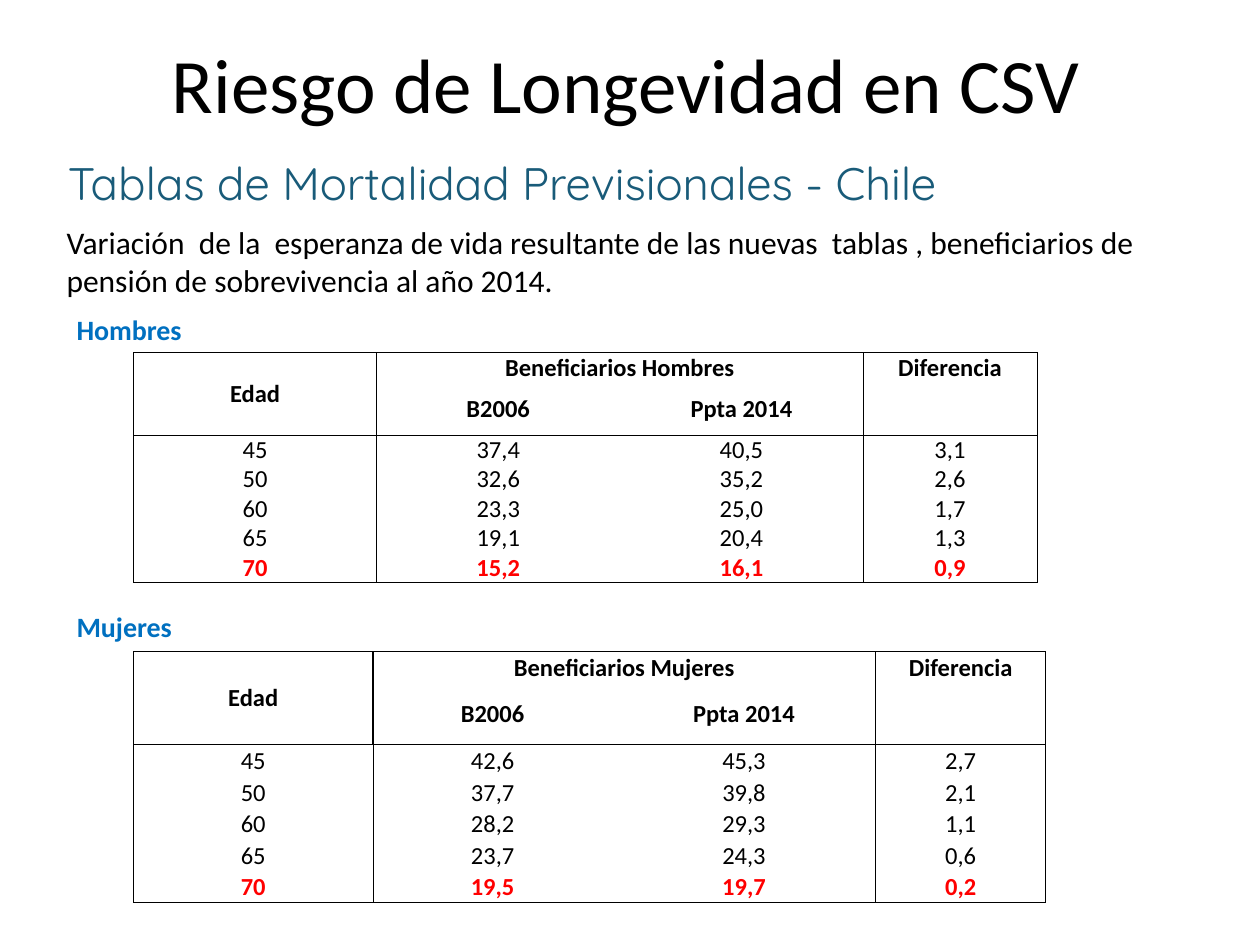
from lxml import etree
from pptx import Presentation
from pptx.dml.color import RGBColor
from pptx.enum import text
from pptx.oxml import ns
from pptx.util import Inches, Pt

BLACK, RED, BLUE, TEAL = "000000", "FF0000", "0070C0", "195B79"
LAST_COLUMN = 3
HEADER_ROWS = 2

MEN = [
    ("45", "37,4", "40,5", "3,1"),
    ("50", "32,6", "35,2", "2,6"),
    ("60", "23,3", "25,0", "1,7"),
    ("65", "19,1", "20,4", "1,3"),
    ("70", "15,2", "16,1", "0,9"),
]
WOMEN = [
    ("45", "42,6", "45,3", "2,7"),
    ("50", "37,7", "39,8", "2,1"),
    ("60", "28,2", "29,3", "1,1"),
    ("65", "23,7", "24,3", "0,6"),
    ("70", "19,5", "19,7", "0,2"),
]


def color(value):
    return RGBColor.from_string(value)


def place(shape, left, top, width, height):
    shape.left, shape.top = Inches(left), Inches(top)
    shape.width, shape.height = Inches(width), Inches(height)


def format_text(frame, size, value, bold=False, font="Calibri"):
    for para in frame.paragraphs:
        for span in para.runs:
            span.font.name = font
            span.font.size = Pt(size)
            span.font.bold = bold
            span.font.color.rgb = color(value)


def add_title(page, words):
    title = page.shapes.title
    place(title, 0.47, 0.15, 9, 1.01)
    frame = title.text_frame
    frame.text = words
    frame.vertical_anchor = text.MSO_ANCHOR.MIDDLE
    frame.paragraphs[0].alignment = text.PP_ALIGN.CENTER
    format_text(frame, 44, BLACK)


def add_text(page, words, position, size, value, **style):
    box = page.shapes.add_textbox(*(Inches(length) for length in position))
    frame = box.text_frame
    frame.word_wrap = True
    frame.text = words
    format_text(frame, size, value, **style)


def set_border(cell, edge, width):
    """Draw one edge (L, R, T or B) of a cell; a width of 0 hides it."""
    properties = cell._tc.get_or_add_tcPr()
    line = etree.SubElement(properties, ns.qn(f"a:ln{edge}"), w=str(Pt(width)))
    if width:
        fill = etree.SubElement(line, ns.qn("a:solidFill"))
        etree.SubElement(fill, ns.qn("a:srgbClr"), val=BLACK)
    else:
        etree.SubElement(line, ns.qn("a:noFill"))


def set_borders(cell, row, column, last_row, heavy_rows):
    """Rule the outline, the header and the age and difference columns."""
    right = column + (cell.span_width if cell.is_merge_origin else 1) - 1
    bottom = row + (cell.span_height if cell.is_merge_origin else 1) - 1
    divider = 1 if row in heavy_rows else 0.5
    widths = {
        "L": {0: 0.5, 1: divider, LAST_COLUMN: 0.5}.get(column, 0),
        "R": {0: divider, 2: 0.5, LAST_COLUMN: 0.5}.get(right, 0),
        "T": 0.5 if row in (0, HEADER_ROWS) else 0,
        "B": 0.5 if bottom in (HEADER_ROWS - 1, last_row) else 0,
    }
    for edge, width in widths.items():
        set_border(cell, edge, width)


def fill_cell(cell, words, bold, value, anchor):
    cell.margin_left = cell.margin_right = 0
    cell.margin_top = cell.margin_bottom = 0
    cell.vertical_anchor = anchor
    if words:
        cell.text_frame.text = words
        cell.text_frame.paragraphs[0].alignment = text.PP_ALIGN.CENTER
        format_text(cell.text_frame, 14, value, bold)


def add_mortality_table(page, group, ages, top, widths, row_height,
                        header_height, heavy_rows):
    """heavy_rows are the rows whose line after the age column is thicker."""
    rows = [("Edad", f"Beneficiarios {group}", "", "Diferencia"),
            ("", "B2006", "Ppta 2014", "")] + ages
    last_row = len(rows) - 1
    heights = [row_height, header_height] + [row_height] * len(ages)
    table = page.shapes.add_table(
        len(rows), len(widths), Inches(1.06), Inches(top),
        Inches(sum(widths)), Inches(sum(heights))).table
    table.first_row = table.horz_banding = False
    for column, width in zip(table.columns, widths):
        column.width = Inches(width)
    for line, height in zip(table.rows, heights):
        line.height = Inches(height)
    table.cell(0, 0).merge(table.cell(1, 0))
    table.cell(0, 1).merge(table.cell(0, 2))

    for row, values in enumerate(rows):
        for column, words in enumerate(values):
            cell = table.cell(row, column)
            middle = row == 1 or (row, column) == (0, 0)
            fill_cell(
                cell, words,
                bold=row < HEADER_ROWS or row == last_row,
                value=RED if row == last_row else BLACK,
                anchor=text.MSO_ANCHOR.MIDDLE if middle
                else text.MSO_ANCHOR.BOTTOM)
            set_borders(cell, row, column, last_row, heavy_rows)
            cell.fill.background()


def main():
    deck = Presentation()
    deck.slide_width, deck.slide_height = Inches(10), Inches(7.5)
    page = deck.slides.add_slide(deck.slide_layouts.get_by_name("Title Only"))
    add_title(page, "Riesgo de Longevidad en CSV")
    add_text(page, "Tablas de Mortalidad Previsionales - Chile",
             (0.44, 1.18, 8.74, 0.54), 26, TEAL, font="Quicksand")
    add_text(page, "Variación  de la  esperanza de vida resultante de las "
             "nuevas  tablas , beneficiarios de pensión de sobrevivencia "
             "al año 2014.", (0.43, 1.72, 9.13, 0.71), 18, BLACK)
    for group, top in (("Hombres", 2.43), ("Mujeres", 4.79)):
        add_text(page, group, (0.51, top, 6.54, 0.37), 16, BLUE, bold=True)
    add_mortality_table(page, "Hombres", MEN, 2.8, (1.93, 1.93, 1.93, 1.38),
                        0.23, 0.42, heavy_rows=(1,))
    add_mortality_table(page, "Mujeres", WOMEN, 5.17, (1.9, 1.9, 2.09, 1.35),
                        0.25, 0.49, heavy_rows=(0, 1))
    deck.save("out.pptx")


if __name__ == "__main__":
    main()
